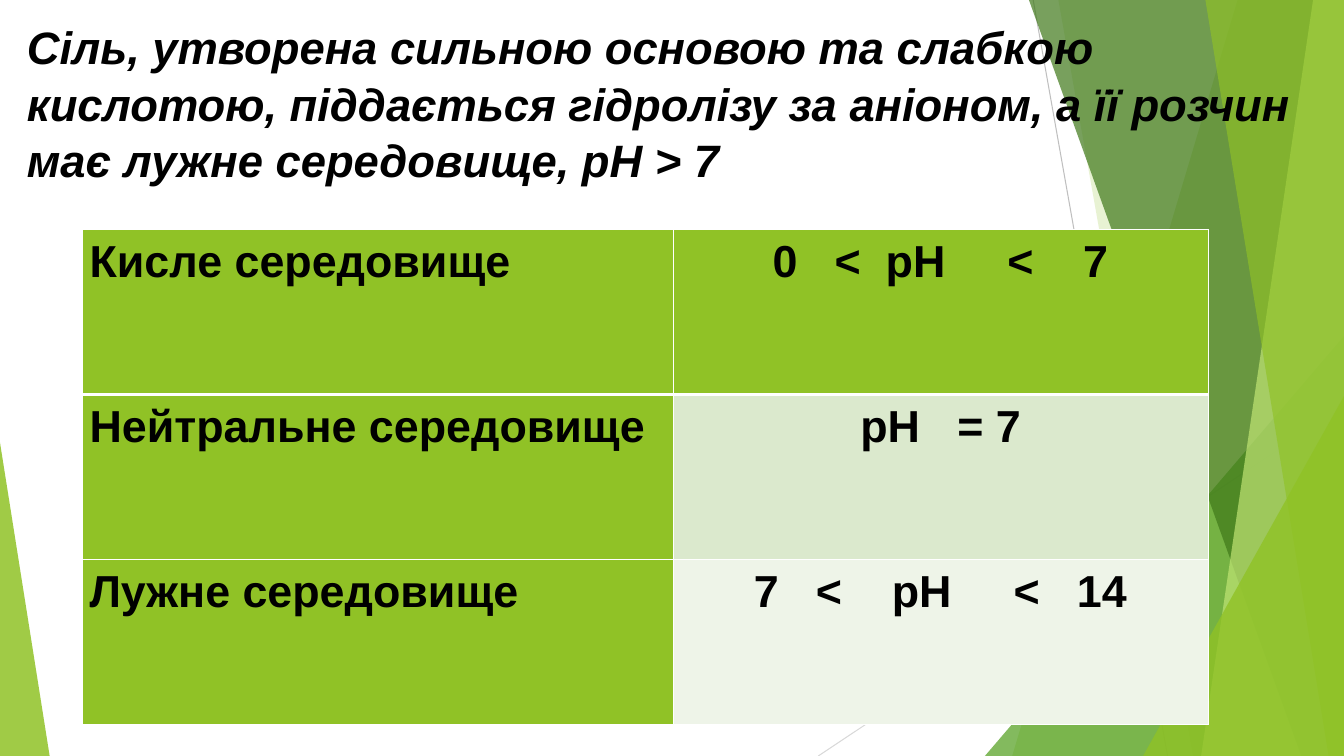
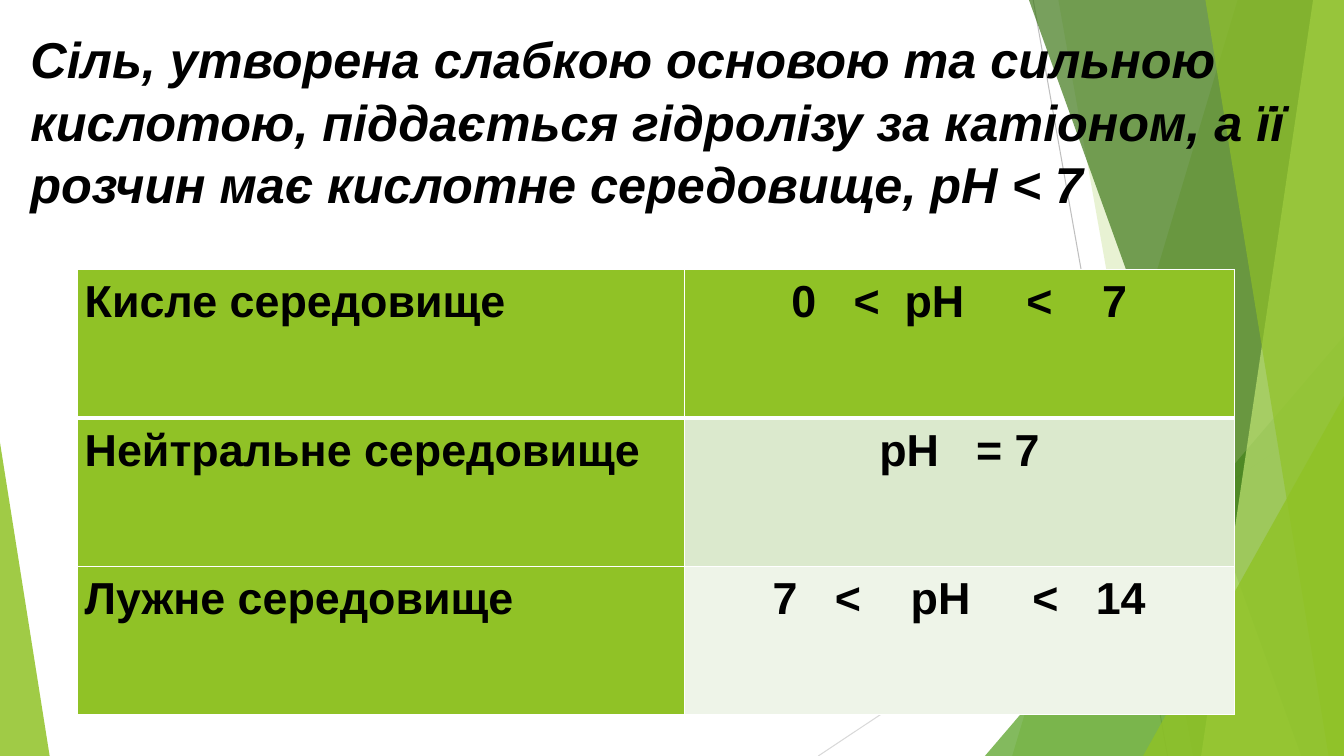
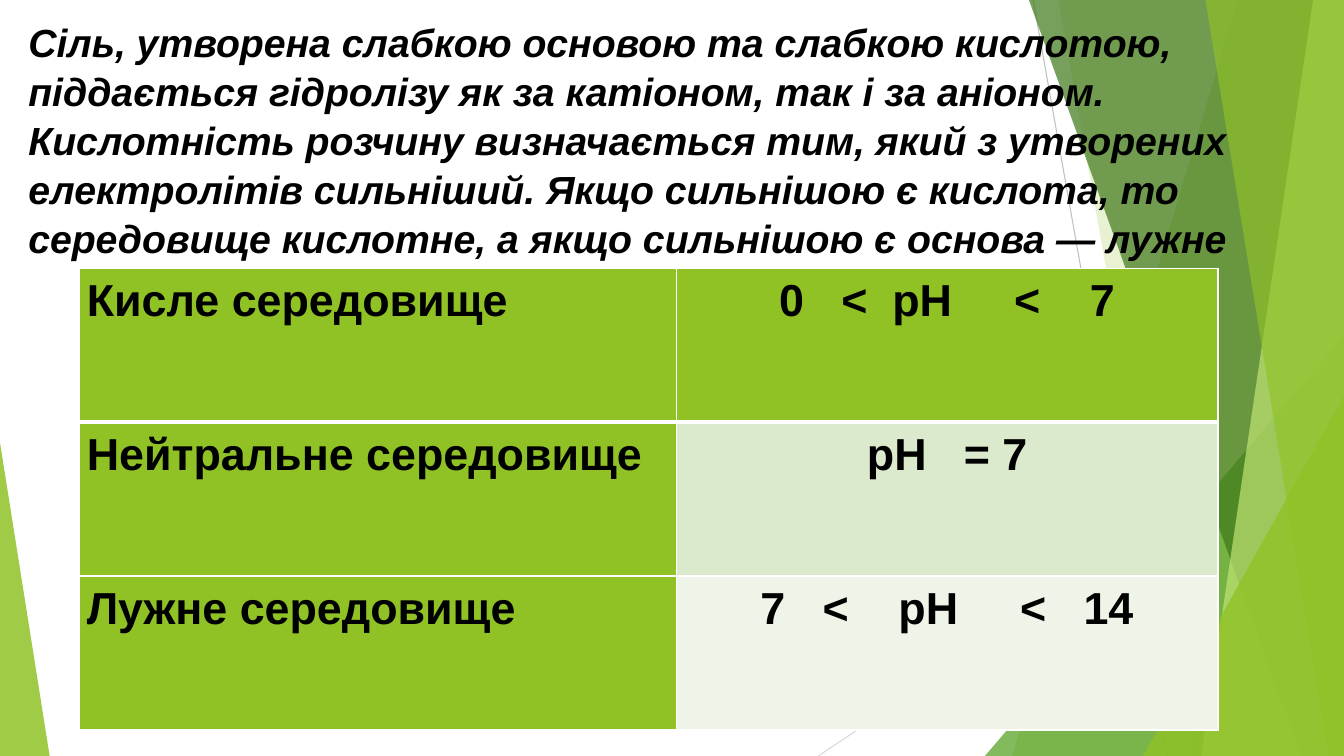
from lxml.etree import SubElement
from pptx import Presentation
from pptx.dml.color import RGBColor
from pptx.enum.shapes import MSO_CONNECTOR, MSO_SHAPE
from pptx.enum.text import MSO_ANCHOR, MSO_AUTO_SIZE, PP_ALIGN
from pptx.oxml import parse_xml
from pptx.oxml.ns import nsdecls, qn
from pptx.util import Pt

WIDE, HIGH = 960, 540
FONT = "Arial"
BLACK = RGBColor(0x00, 0x00, 0x00)
WHITE = RGBColor(0xFF, 0xFF, 0xFF)
GREEN = RGBColor(0x90, 0xC2, 0x26)
LEAF = RGBColor(0x54, 0xA0, 0x21)
DARK = RGBColor(0x3F, 0x78, 0x19)
LIME = RGBColor(0xC0, 0xE4, 0x74)
PALE = RGBColor(0xDB, 0xE9, 0xCD)
MIST = RGBColor(0xEE, 0xF4, 0xE8)
GRAY = RGBColor(0xBF, 0xBF, 0xBF)
SILVER = RGBColor(0xD9, 0xD9, 0xD9)

# Label, pH range and fill of the range cell
ROWS = [
    ("Кисле середовище", "0   <  рН     <    7", GREEN),
    ("Нейтральне середовище", "рН   = 7", PALE),
    ("Лужне середовище", "7   <    рН     <   14", MIST),
]

# Title text, size and box; table box and width of its first column
SLIDES = [
    ("Сіль, утворена сильною основою та слабкою кислотою, піддається "
     "гідролізу за аніоном, а її розчин має лужне середовище, pH > 7",
     32.4, (12, 8.5, 936, 143), (59, 164, 804, 353.5), 422),
    ("Сіль, утворена слабкою основою та сильною кислотою, піддається "
     "гідролізу за катіоном, а її розчин має кислотне середовище, pH < 7",
     36, (14.5, 14.5, 932, 137.5), (55.5, 192.5, 826.5, 318), 433.5),
    ("Сіль, утворена слабкою основою та слабкою кислотою, піддається "
     "гідролізу як за катіоном, так і за аніоном. Кислотність розчину "
     "визначається тим, який з утворених електролітів сильніший. Якщо "
     "сильнішою є кислота, то середовище кислотне, а якщо сильнішою є "
     "основа — лужне",
     28, (13, 8, 946, 171), (57, 191.5, 813, 330), 426.5),
]


def place(shape, box):
    shape.left, shape.top, shape.width, shape.height = map(Pt, box)


def write(para, text, size, italic=None):
    run = para.add_run()
    run.text = text
    font = run.font
    font.name, font.size = FONT, Pt(size)
    font.bold, font.italic = True, italic
    font.color.rgb = BLACK


# Background art
def tint(shape, color, alpha):
    shape.shadow.inherit = False
    shape.line.fill.background()
    shape.fill.solid()
    shape.fill.fore_color.rgb = color
    node = shape.element.xpath(".//a:srgbClr")[0]
    SubElement(node, qn("a:alpha")).set("val", str(alpha * 1000))
    return shape


def ray(shapes, start, end, color):
    line = shapes.add_connector(MSO_CONNECTOR.STRAIGHT,
                                *map(Pt, start + end))
    line.line.color.rgb = color
    line.line.width = Pt(0.75)
    SubElement(line.element.spPr, qn("a:effectLst"))
    return line


def band(shapes, top, base, color, alpha):
    """Fill from a slanted left edge to the right side of the slide."""
    form = shapes.build_freeform(Pt(top), 0)
    form.add_line_segments([(Pt(WIDE), 0), (Pt(WIDE), Pt(HIGH)),
                            (Pt(base), Pt(HIGH))], close=True)
    return tint(form.convert_to_shape(), color, alpha)


def wedge(shapes, left, top, width, apex, color, alpha):
    """Triangle that stands on the bottom edge of the slide."""
    shape = shapes.add_shape(MSO_SHAPE.ISOSCELES_TRIANGLE, Pt(left), Pt(top),
                             Pt(width), Pt(HIGH - top))
    shape.adjustments[0] = apex
    return tint(shape, color, alpha)


def draw_art(shapes):
    return [
        ray(shapes, (738, 0), (834, HIGH), GRAY),
        ray(shapes, (WIDE, 290), (584.5, HIGH), SILVER),
        band(shapes, 884, 723, GREEN, 30),
        band(shapes, 756, 852, GREEN, 20),
        wedge(shapes, 703.5, 240, 256.5, 1, LEAF, 72),
        band(shapes, 735, 929.5, DARK, 70),
        band(shapes, 938, 858, LIME, 70),
        band(shapes, 861, 949, GREEN, 65),
        wedge(shapes, 816.5, 283, 143.5, 1, GREEN, 80),
        wedge(shapes, 0, 316, 35.5, 0, GREEN, 85),
    ]


def share_art(slide):
    """Move the art into the layout, so that every slide has it."""
    layout = slide.slide_layout
    for holder in list(layout.placeholders)[1:]:
        holder.element.getparent().remove(holder.element)
    for part in draw_art(slide.shapes):
        layout.shapes.element.append(part.element)


# Title
def add_title(slide, text, size, box):
    title = slide.shapes.title
    place(title, box)
    frame = title.text_frame
    frame.word_wrap = True
    frame.auto_size = MSO_AUTO_SIZE.NONE
    frame.vertical_anchor = MSO_ANCHOR.TOP
    para = frame.paragraphs[0]
    para.alignment = PP_ALIGN.LEFT
    para.line_spacing = 1.04
    write(para, text, size, italic=True)


# Table
def edge(cell, top, base):
    props = cell._tc.get_or_add_tcPr()
    sides = {"L": 1, "R": 1, "T": top, "B": base}
    for spot, (side, width) in enumerate(sides.items()):
        props.insert(spot, parse_xml(
            f'<a:ln{side} {nsdecls("a")} w="{Pt(width)}"><a:solidFill>'
            f'<a:srgbClr val="{WHITE}"/></a:solidFill></a:ln{side}>'))


def fill_cell(cell, text, color, align):
    cell.fill.solid()
    cell.fill.fore_color.rgb = color
    cell.margin_left = cell.margin_right = Pt(5)
    cell.margin_top = cell.margin_bottom = 0
    para = cell.text_frame.paragraphs[0]
    para.alignment = align
    para.line_spacing = 1.15
    write(para, text, 32)


def add_scale(slide, box, first):
    table = slide.shapes.add_table(len(ROWS), 2, *map(Pt, box)).table
    table.columns[0].width = Pt(first)
    table.columns[1].width = Pt(box[2] - first)
    for row, (label, span, color) in enumerate(ROWS):
        table.rows[row].height = Pt(box[3] / len(ROWS))
        fill_cell(table.cell(row, 0), label, GREEN, PP_ALIGN.LEFT)
        fill_cell(table.cell(row, 1), span, color, PP_ALIGN.CENTER)
        for cell in table.rows[row].cells:
            edge(cell, 3 if row == 1 else 1, 3 if row == 0 else 1)


def main():
    deck = Presentation()
    deck.slide_width, deck.slide_height = Pt(WIDE), Pt(HIGH)
    layout = deck.slide_layouts[5]
    for text, size, head, box, first in SLIDES:
        slide = deck.slides.add_slide(layout)
        add_title(slide, text, size, head)
        add_scale(slide, box, first)
    share_art(deck.slides[0])
    deck.save("out.pptx")


if __name__ == "__main__":
    main()
